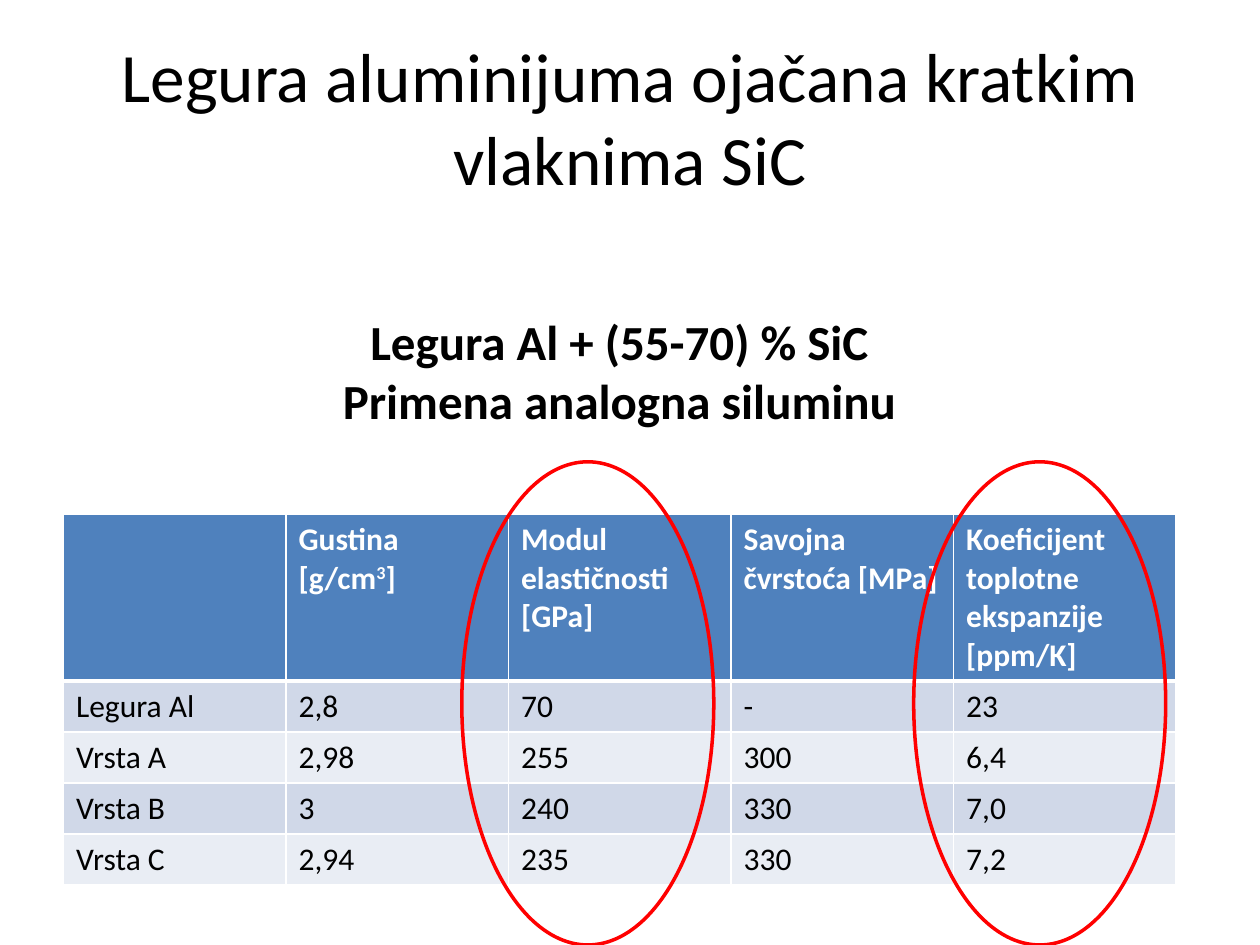
from lxml import etree
from pptx import Presentation
from pptx.dml.color import RGBColor
from pptx.enum.shapes import MSO_SHAPE
from pptx.enum.text import MSO_ANCHOR, PP_ALIGN
from pptx.oxml.ns import qn
from pptx.util import Cm, Pt

OVAL = MSO_SHAPE.OVAL
MIDDLE = MSO_ANCHOR.MIDDLE
CENTER = PP_ALIGN.CENTER
TITLE_ONLY = 5

COLORS = {
    "text": "000000",
    "white": "FFFFFF",
    "header": "4F81BD",
    "odd_row": "D0D8E8",
    "even_row": "E9EDF4",
    "highlight": "FF0000",
}
FORMATS = {
    "title": {"size": Pt(39.6), "bold": False},
    "statement": {"size": Pt(28), "bold": True},
    "header": {"size": Pt(18), "bold": True},
    "body": {"size": Pt(18), "bold": False},
}
HEADERS = [
    [""],
    ["Gustina [g/cm", "3", "]"],
    ["Modul elastičnosti [GPa]"],
    ["Savojna čvrstoća [MPa]"],
    ["Koeficijent toplotne ekspanzije [ppm/K]"],
]
MATERIALS = [
    ["Legura Al", "2,8", "70", "-", "23"],
    ["Vrsta A", "2,98", "255", "300", "6,4"],
    ["Vrsta B", "3", "240", "330", "7,0"],
    ["Vrsta C", "2,94", "235", "330", "7,2"],
]
HEADER_HEIGHT = Cm(3.33)
ROW_HEIGHT = Cm(1.03)


def color(name):
    """Return the named colour."""
    return RGBColor.from_string(COLORS[name])


def add_run(paragraph, text, style, color_name="text"):
    """Add a formatted run and return it."""
    run = paragraph.add_run()
    run.text = text
    for attribute, value in FORMATS[style].items():
        setattr(run.font, attribute, value)
    run.font.name = "Calibri"
    run.font.color.rgb = color(color_name)
    return run


def fill_title(slide, box, text):
    """Place the title placeholder in the box and fill it."""
    title = slide.shapes.title
    title.left, title.top, title.width, title.height = box
    title.text_frame.vertical_anchor = MIDDLE
    paragraph = title.text_frame.paragraphs[0]
    paragraph.alignment = CENTER
    add_run(paragraph, text, "title")


def add_statement(slide, box, lines):
    """Add centred bold lines in the box."""
    frame = slide.shapes.add_textbox(*box).text_frame
    frame.word_wrap = True
    for index, line in enumerate(lines):
        paragraph = frame.add_paragraph() if index else frame.paragraphs[0]
        paragraph.alignment = CENTER
        add_run(paragraph, line, "statement")


def set_borders(cell, top, bottom):
    """Draw white cell borders with the given top and bottom widths in points."""
    properties = cell._tc.get_or_add_tcPr()
    for side, width in {"L": 1, "R": 1, "T": top, "B": bottom}.items():
        line = etree.SubElement(properties, qn(f"a:ln{side}"), w=str(Pt(width)))
        fill = etree.SubElement(line, qn("a:solidFill"))
        etree.SubElement(fill, qn("a:srgbClr"), val=COLORS["white"])


def fill_cell(cell, parts, row_index):
    """Format a cell and write its parts, the second one as superscript."""
    is_header = row_index == 0
    set_borders(cell, 3 if row_index == 1 else 1, 3 if is_header else 1)
    band = "odd_row" if row_index % 2 else "even_row"
    cell.fill.solid()
    cell.fill.fore_color.rgb = color("header" if is_header else band)
    style, color_name = ("header", "white") if is_header else ("body", "text")
    for index, part in enumerate(parts):
        run = add_run(cell.text_frame.paragraphs[0], part, style, color_name)
        if index == 1:
            run._r.get_or_add_rPr().set("baseline", "30000")


def add_properties_table(slide, box):
    """Add the table of material properties in the box."""
    rows = [HEADERS] + [[[value] for value in row] for row in MATERIALS]
    table = slide.shapes.add_table(len(rows), len(HEADERS), *box).table
    for column in table.columns:
        column.width = box[2] // len(HEADERS)
    for row_index, values in enumerate(rows):
        table.rows[row_index].height = ROW_HEIGHT if row_index else HEADER_HEIGHT
        for column_index, parts in enumerate(values):
            fill_cell(table.cell(row_index, column_index), parts, row_index)


def add_highlight(slide, box):
    """Add a red outlined ellipse in the box."""
    ellipse = slide.shapes.add_shape(OVAL, *box)
    ellipse.shadow.inherit = False
    ellipse.fill.background()
    ellipse.line.color.rgb = color("highlight")
    ellipse.line.width = Pt(2)


def main():
    """Build and save the slide."""
    presentation = Presentation()
    presentation.slide_width = Cm(25.4)
    presentation.slide_height = Cm(19.05)
    slide = presentation.slides.add_slide(presentation.slide_layouts[TITLE_ONLY])
    fill_title(
        slide,
        (Cm(1.27), Cm(0.76), Cm(22.86), Cm(3.18)),
        "Legura aluminijuma ojačana kratkim vlaknima SiC",
    )
    table_height = HEADER_HEIGHT + len(MATERIALS) * ROW_HEIGHT
    add_properties_table(slide, (Cm(1.28), Cm(10.37), Cm(22.43), table_height))
    add_statement(
        slide,
        (Cm(1.9), Cm(6.15), Cm(21.17), Cm(2.65)),
        ["Legura Al + (55-70) % SiC", "Primena analogna siluminu"],
    )
    for left in (Cm(9.31), Cm(18.42)):
        add_highlight(slide, (left, Cm(9.31), Cm(5.08), Cm(9.74)))
    presentation.save("out.pptx")


if __name__ == "__main__":
    main()
